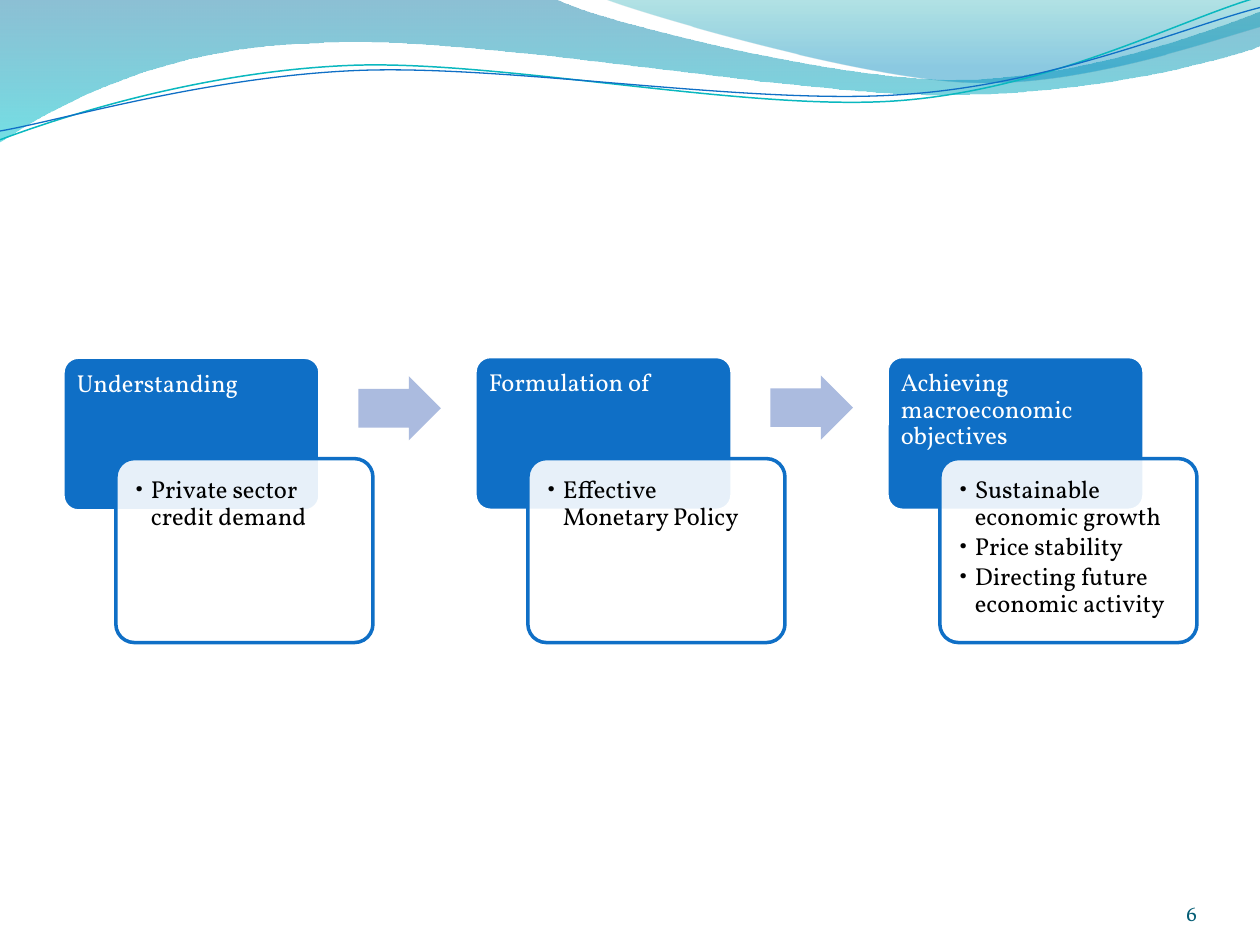
from lxml import etree
from pptx import Presentation
from pptx import util as u
from pptx.dml.color import RGBColor
from pptx.enum import shapes, text
from pptx.oxml.ns import qn

FONT = "Vollkorn"
WHITE = RGBColor(0xFF, 0xFF, 0xFF)
BLACK = RGBColor(0x00, 0x00, 0x00)
BLUE = RGBColor(0x0F, 0x6F, 0xC6)
PALE_BLUE = RGBColor(0xAB, 0xBB, 0xDF)
TEAL = RGBColor(0x0A, 0xB8, 0xBF)
DARK_TEAL = RGBColor(0x04, 0x5D, 0x75)
DEEP_BLUE = RGBColor(0x00, 0x74, 0xA1)
AQUA = RGBColor(0x00, 0xC6, 0xCF)
SEA_GREEN = RGBColor(0x00, 0xA1, 0xA9)
SKY_BLUE = RGBColor(0x00, 0x8B, 0xBF)

deck = Presentation()
deck.slide_width, deck.slide_height = u.Inches(10), u.Inches(7.5)
page = deck.slides.add_slide(deck.slide_layouts[6])
CELL = deck.slide_width / 100  # the page is a grid of 100 by 75 cells


def write_text(box, lines, color, size=14, inset=0, gap=0, spacing=1.0,
               bullet=False, align=text.PP_ALIGN.LEFT,
               anchor=text.MSO_ANCHOR.TOP):
    frame = box.text_frame
    frame.word_wrap = True
    frame.vertical_anchor = anchor
    frame.margin_left = frame.margin_right = round(inset * CELL)
    frame.margin_top = frame.margin_bottom = round(inset * CELL)
    for index, line in enumerate(lines):
        para = frame.add_paragraph() if index else frame.paragraphs[0]
        para.alignment = align
        para.line_spacing = spacing
        para.space_after = u.Pt(gap)
        span = para.add_run()
        span.text = line
        span.font.name, span.font.size = FONT, u.Pt(size)
        span.font.color.rgb = color
        if bullet:
            properties = para._p.get_or_add_pPr()
            properties.set("marL", str(round(1.25 * CELL)))
            properties.set("indent", str(round(-1.25 * CELL)))
            etree.SubElement(properties, qn("a:buFont")).set("typeface", FONT)
            etree.SubElement(properties, qn("a:buChar")).set("char", "•")


def set_opacity(shape, *percents):
    colors = shape._element.spPr.iter(qn("a:srgbClr"))
    for percent, color in zip(percents, colors):
        etree.SubElement(color, qn("a:alpha")).set("val", str(percent * 1000))


# Waves at the top: two numbers are a straight step, six a Bézier curve
wide_band = [
    (0, 0), (44, -0.1), (47.6, 1.7, 66.4, 6.3, 75.8, 6.3),
    (85.3, 6.3, 95.8, 2.6, 100, 0.9), (100.1, 3.6),
    (98.3, 4.4, 87, 7.6, 74.6, 7.5), (62.2, 7.5, 38.2, 2.8, 25.7, 3.4),
    (12.9, 3.6, 4.6, 8.3, -0.1, 11.3), (0, 0)]
right_band = [
    (47.9, -0.1), (50.9, 1.1, 68.2, 6.2, 76.9, 6.5),
    (85.6, 6.9, 96.1, 3.2, 100, 2.1), (100, 0), (47.9, -0.1)]
teal_line = [
    (0, 11.1), (4.8, 9.3, 15.8, 5.7, 27.7, 5.2),
    (39.5, 4.7, 59.3, 8.9, 71.3, 8), (83.3, 7.1, 93.8, 1.5, 99.8, -0.2)]
blue_line = [
    (0, 10.4), (4.7, 9.6, 16.4, 6.1, 28.3, 5.6),
    (40.3, 5.1, 59.7, 8.4, 71.7, 7.5), (83.6, 6.7, 94.1, 2.1, 100, 0.6)]
waves = [
    (wide_band, [(0, DEEP_BLUE, 45), (1, AQUA, 55)], None),
    (right_band, [(0, SEA_GREEN, 30), (0.8, SKY_BLUE, 45)], None),
    (teal_line, None, (TEAL, 0.85)),
    (blue_line, None, (BLUE, 0.75)),
]
for route, gradient, stroke in waves:
    ends = [(round(step[-2] * CELL), round(step[-1] * CELL)) for step in route]
    builder = page.shapes.build_freeform(*ends[0], scale=1.0)
    builder.add_line_segments(ends[1:], close=gradient is not None)
    wave = builder.convert_to_shape()
    wave.shadow.inherit = False

    # Bend the steps that have control points
    segments = list(wave._element.spPr.iter(qn("a:lnTo")))
    for segment, step in zip(segments, route[1:]):
        if len(step) == 6:
            segment.tag = qn("a:cubicBezTo")
            for index in (0, 1):
                x, y = step[2 * index:2 * index + 2]
                control = etree.Element(qn("a:pt"))
                control.set("x", str(round(x * CELL) - wave.left))
                control.set("y", str(round(y * CELL) - wave.top))
                segment.insert(index, control)

    if gradient:
        wave.fill.gradient()
        wave.fill.gradient_angle = 270
        for stop, (position, color, _) in zip(wave.fill.gradient_stops, gradient):
            stop.position, stop.color.rgb = position, color
        set_opacity(wave, *[opacity for _, _, opacity in gradient])
        wave.line.fill.background()
    else:
        wave.fill.background()
        wave.line.color.rgb, wave.line.width = stroke[0], u.Pt(stroke[1])

# Three stages, each a header, a detail box and an arrow to the next
LEFT, PITCH = 5, 32.7
ROUND, ARROW = shapes.MSO_SHAPE.ROUNDED_RECTANGLE, shapes.MSO_SHAPE.RIGHT_ARROW
stages = [
    (28.35, "Understanding", ["Private sector credit demand"]),
    (28.3, "Formulation of", ["Effective Monetary Policy"]),
    (28.3, "Achieving macroeconomic objectives",
     ["Sustainable economic growth", "Price stability",
      "Directing future economic activity"]),
]
for column, (top, heading, details) in enumerate(stages):
    left = LEFT + column * PITCH
    parts = [
        (ROUND, (left, top, 20.4, 12.2), [0.1], BLUE, WHITE),
        (ROUND, (left + 4.2, 36.4, 20.4, 14.6), [0.1], WHITE, BLUE),
        (ARROW, (left + 23.45, top + 1.5, 6.55, 5.1), [0.6, 0.5], PALE_BLUE, None),
    ]
    if column == len(stages) - 1:
        parts.pop()
    drawn = []
    for kind, place, adjustments, fill, outline in parts:
        box = page.shapes.add_shape(kind, *[round(n * CELL) for n in place])
        box.shadow.inherit = False
        for index, value in enumerate(adjustments):
            box.adjustments[index] = value
        box.fill.solid()
        box.fill.fore_color.rgb = fill
        if outline is None:
            box.line.fill.background()
        else:
            box.line.color.rgb, box.line.width = outline, u.Pt(2)
        drawn.append(box)
    header, detail = drawn[:2]
    set_opacity(detail, 90)
    write_text(header, [heading], WHITE, inset=0.75, gap=4.9, spacing=0.9)
    write_text(detail, details, BLACK, inset=1.1, gap=2.1, spacing=0.9, bullet=True)

# Page number
number = page.shapes.add_textbox(*[round(n * CELL) for n in (86.7, 69.5, 8.3, 4)])
write_text(number, ["6"], DARK_TEAL, size=12, align=text.PP_ALIGN.RIGHT,
           anchor=text.MSO_ANCHOR.BOTTOM)

deck.save("out.pptx")
